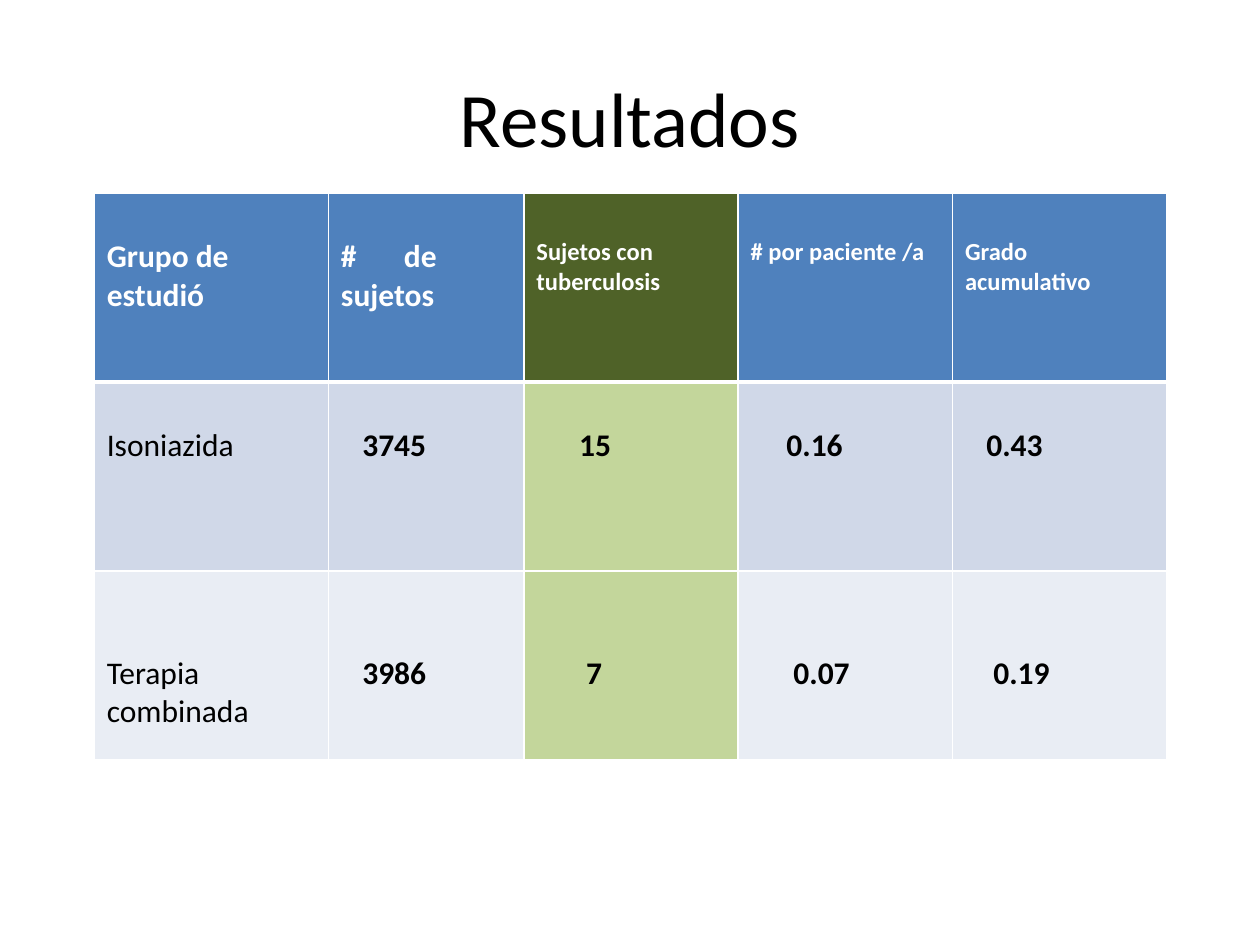
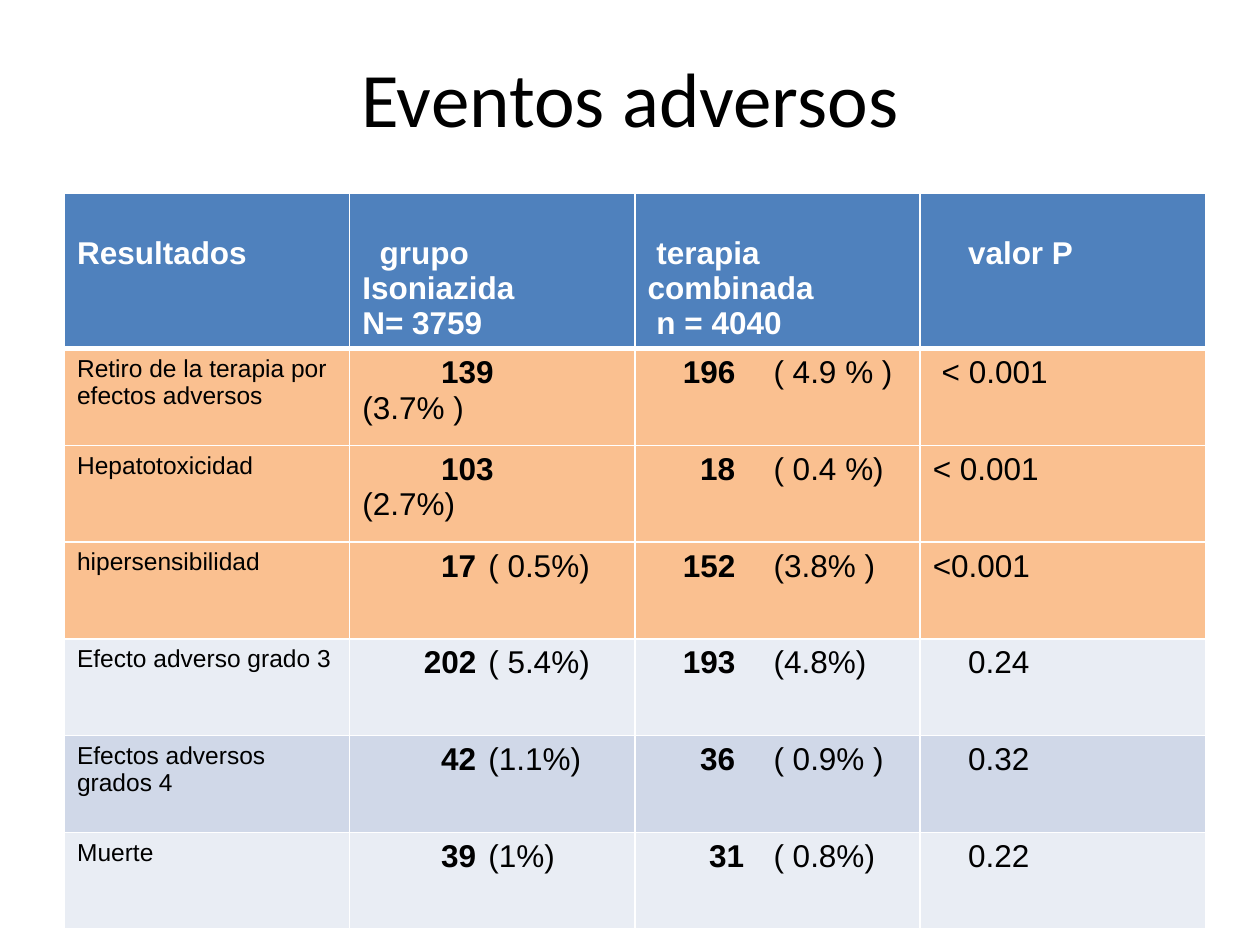
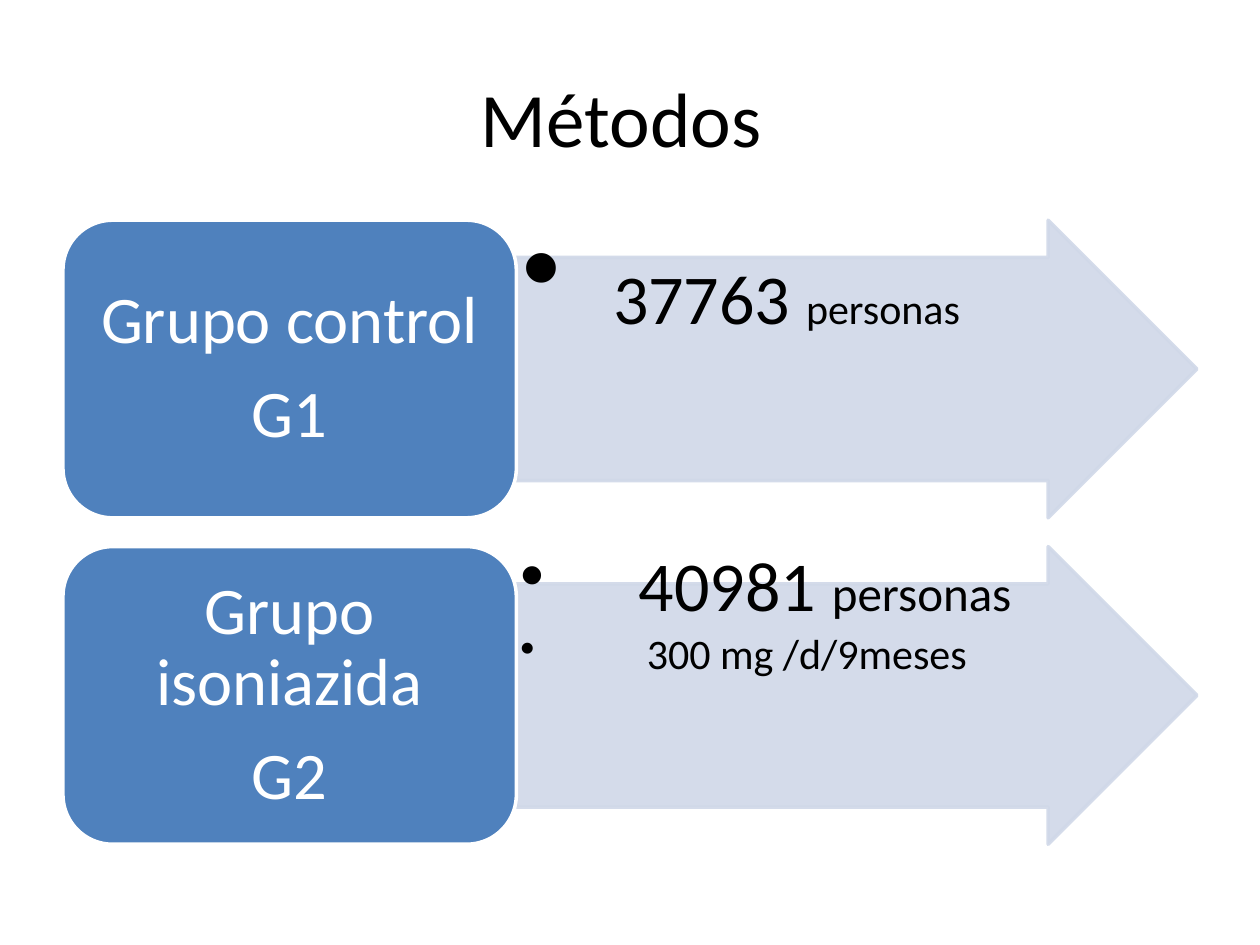
"""Build three slides on tuberculosis therapy: results, adverse events and methods."""
from lxml import etree
from pptx import Presentation
from pptx.dml.color import RGBColor
from pptx.enum.shapes import MSO_SHAPE
from pptx.enum.text import MSO_ANCHOR, PP_ALIGN
from pptx.oxml import parse_xml
from pptx.oxml.ns import nsdecls, qn
from pptx.util import Cm, Pt

ARROW, ROUNDED = MSO_SHAPE.RIGHT_ARROW, MSO_SHAPE.ROUNDED_RECTANGLE
MIDDLE, CENTER = MSO_ANCHOR.MIDDLE, PP_ALIGN.CENTER
COLORS = {
    "black": "000000", "white": "FFFFFF", "blue": "4F81BD",
    "band": "D0D8E8", "pale": "E9EDF4", "olive": "4F6228",
    "green": "C3D69B", "orange": "FAC090",
}
RGB = {name: RGBColor.from_string(value) for name, value in COLORS.items()}


def set_font(paragraph, name, size, color, bold=False):
    font = paragraph.font
    font.name, font.size, font.bold = name, Pt(size), bold
    font.color.rgb = RGB[color]


def fill_cell(cell, row, lines, fill, font, size, bold, top):
    header = row == 0
    cell.fill.solid()
    cell.fill.fore_color.rgb = RGB[fill]
    cell.margin_top = Cm(top)
    widths = {"lnL": 1, "lnR": 1, "lnT": 3 if row == 1 else 1, "lnB": 3 if header else 1}
    for position, (side, width) in enumerate(widths.items()):
        cell._tc.get_or_add_tcPr().insert(position, parse_xml(
            f'<a:{side} {nsdecls("a")} w="{Pt(width)}"><a:solidFill>'
            f'<a:srgbClr val="{COLORS["white"]}"/></a:solidFill></a:{side}>'))
    for number, (text, indent, tab) in enumerate(lines):
        paragraph = cell.text_frame.paragraphs[0] if number == 0 else cell.text_frame.add_paragraph()
        properties = paragraph._p.get_or_add_pPr()
        properties.set("marL", "0")
        properties.set("indent", str(Cm(indent)))
        if tab:
            stops = etree.SubElement(properties, qn("a:tabLst"))
            etree.SubElement(stops, qn("a:tab"), pos=str(Cm(tab)), algn="l")
        set_font(paragraph, font, size, "white" if header else "black", bold)
        start, separator, rest = text.partition("\t")
        paragraph.add_run().text = start
        if rest:
            after_tab = paragraph.add_run()
            after_tab.text = separator + rest
            after_tab.font.bold = header


prs = Presentation()
prs.slide_width, prs.slide_height = Cm(25.4), Cm(19.05)

slides = []
for heading, height in [("Resultados", 3.18), ("Eventos adversos", 2.36), ("Métodos ", 3.18)]:
    slide = prs.slides.add_slide(prs.slide_layouts[5])
    title = slide.shapes.title
    title.left, title.top, title.width, title.height = Cm(1.27), Cm(0.76), Cm(22.86), Cm(height)
    title.text_frame.text = heading
    title.text_frame.vertical_anchor = MIDDLE
    title.text_frame.paragraphs[0].alignment = CENTER
    set_font(title.text_frame.paragraphs[0], "Calibri", 44, "black")
    slides.append(slide)
results_slide, events_slide, methods_slide = slides

RESULTS = [
    [[("Grupo de estudió", 0, 0)], [("#\tde sujetos", 0, 1.03)],
     [("Sujetos con tuberculosis", 0, 0)], [("# por paciente /a", 0, 0)],
     [("Grado acumulativo", 0, 0)]],
    [[("Isoniazida", 0, 0)], [("3745", 0.43, 0)], [("15", 0.86, 0)],
     [("0.16", 0.72, 0)], [("0.43", 0.43, 0)]],
    [[("Terapia", 0, 0), ("combinada", 0, 0)], [("3986", 0.43, 0)], [("7", 1, 0)],
     [("0.07", 0.86, 0)], [("0.19", 0.57, 0)]],
]
results = results_slide.shapes.add_table(3, 5, Cm(1.9), Cm(3.89), Cm(21.62), Cm(11.43)).table
for column, width in zip(results.columns, [4.72, 3.94, 4.32, 4.32, 4.32]):
    column.width = Cm(width)
for row, (cells, row_fill, accent, top) in enumerate(zip(
        RESULTS, ["blue", "band", "pale"], ["olive", "green", "green"], [0.9, 0.9, 1.68])):
    for col, lines in enumerate(cells):
        fill_cell(results.cell(row, col), row, lines, accent if col == 2 else row_fill, "Calibri",
                  14 if row == 0 and col >= 2 else 18, row == 0 or col > 0, top)

EVENTS = [
    [[("Resultados", 0, 0)], [("grupo Isoniazida", 0.35, 0), ("N= 3759", 0, 0)],
     [("terapia combinada", 0.18, 0), ("n = 4040", 0.18, 0)], [("valor P", 0.71, 0)]],
    [[("Retiro de la terapia por efectos adversos", 0, 0)], [("139\t(3.7% )", 1.59, 3.17)],
     [("196\t( 4.9 % )", 0.71, 2.47)], [("< 0.001", 0.18, 0)]],
    [[("Hepatotoxicidad", 0, 0)], [("103\t(2.7%)", 1.59, 3.34)],
     [("18\t( 0.4 %)", 1.06, 2.65)], [("< 0.001", 0, 0)]],
    [[("hipersensibilidad", 0, 0)], [("17\t( 0.5%)", 1.59, 3.34)],
     [("152\t(3.8% )", 0.71, 2.65)], [("<0.001", 0, 0)]],
    [[("Efecto adverso grado 3", 0, 0)], [("202\t( 5.4%)", 1.24, 3.34)],
     [("193\t(4.8%)", 0.71, 2.83)], [("0.24", 0.71, 0)]],
    [[("Efectos adversos grados 4", 0, 0)], [("42\t(1.1%)", 1.59, 3.34)],
     [("36\t( 0.9% )", 1.06, 2.65)], [("0.32", 0.71, 0)]],
    [[("Muerte", 0, 0)], [("39\t(1%)", 1.59, 3.88)],
     [("31\t( 0.8%)", 1.24, 3.01)], [("0.22", 0.71, 0)]],
]
EVENT_FILLS = ["blue", "orange", "orange", "orange", "pale", "band", "pale"]
events = events_slide.shapes.add_table(7, 4, Cm(1.3), Cm(3.89), Cm(23), Cm(14.84)).table
for row, (cells, fill) in enumerate(zip(EVENTS, EVENT_FILLS)):
    header = row == 0
    events.rows[row].height = Cm(3.14 if header else 1.95)
    for col, lines in enumerate(cells):
        fill_cell(events.cell(row, col), row, lines, fill, "Arial",
                  14 if col == 0 and not header else 18, header or col in (1, 2),
                  0.86 if header else 0.13)

GROUPS = [
    (["Grupo control", "G1"], 0.13,
     [(1.3, [(" ", 65), ("37763 ", 40), ("personas", 24)])]),
    (["Grupo isoniazida", "G2"], 0.08,
     [(2.39, [("40981 ", 40), ("personas", 28)]), (2.55, [("300 mg /d/9meses", 24)])]),
]
for index, (names, inset, facts) in enumerate(GROUPS):
    top = Cm(4.44 + 6.58 * index)
    arrow = methods_slide.shapes.add_shape(ARROW, Cm(10.41), top, Cm(13.72), Cm(6))
    group_box = methods_slide.shapes.add_shape(ROUNDED, Cm(1.27), top, Cm(9.14), Cm(6))
    arrow.adjustments[0], arrow.adjustments[1] = 0.75, 0.5
    for shape, fill, line in [(arrow, "band", "band"), (group_box, "blue", "white")]:
        shape.shadow.inherit = False
        shape.fill.solid()
        shape.fill.fore_color.rgb = RGB[fill]
        shape.line.color.rgb = RGB[line]
        shape.line.width = Pt(2)
    for color in arrow._element.spPr.iter(qn("a:srgbClr")):
        etree.SubElement(color, qn("a:alpha"), val="90000")

    label = group_box.text_frame
    label.word_wrap, label.vertical_anchor = True, MIDDLE
    label.margin_left = label.margin_right = Cm(0.1)
    label.margin_top = label.margin_bottom = 0
    label.text = "\n".join(names)
    for paragraph in label.paragraphs:
        paragraph.alignment, paragraph.line_spacing = CENTER, 0.9
        paragraph.space_after = Pt(12.5)
        set_font(paragraph, "Calibri", 38, "white")

    details = methods_slide.shapes.add_textbox(Cm(10.41), top, Cm(13.72), Cm(6)).text_frame
    details.word_wrap = True
    details.margin_left = details.margin_right = details.margin_top = details.margin_bottom = Cm(inset)
    for number, (hang, parts) in enumerate(facts):
        paragraph = details.paragraphs[0] if number == 0 else details.add_paragraph()
        paragraph.line_spacing, paragraph.space_after = 0.9, Pt(4)
        properties = paragraph._p.get_or_add_pPr()
        properties.set("marL", str(Cm(hang)))
        properties.set("indent", str(-Cm(hang)))
        etree.SubElement(properties, qn("a:buChar"), char="•")
        set_font(paragraph, "Calibri", parts[0][1], "black")
        for text, size in parts:
            run = paragraph.add_run()
            run.text = text
            run.font.size = Pt(size)

prs.save("out.pptx")
